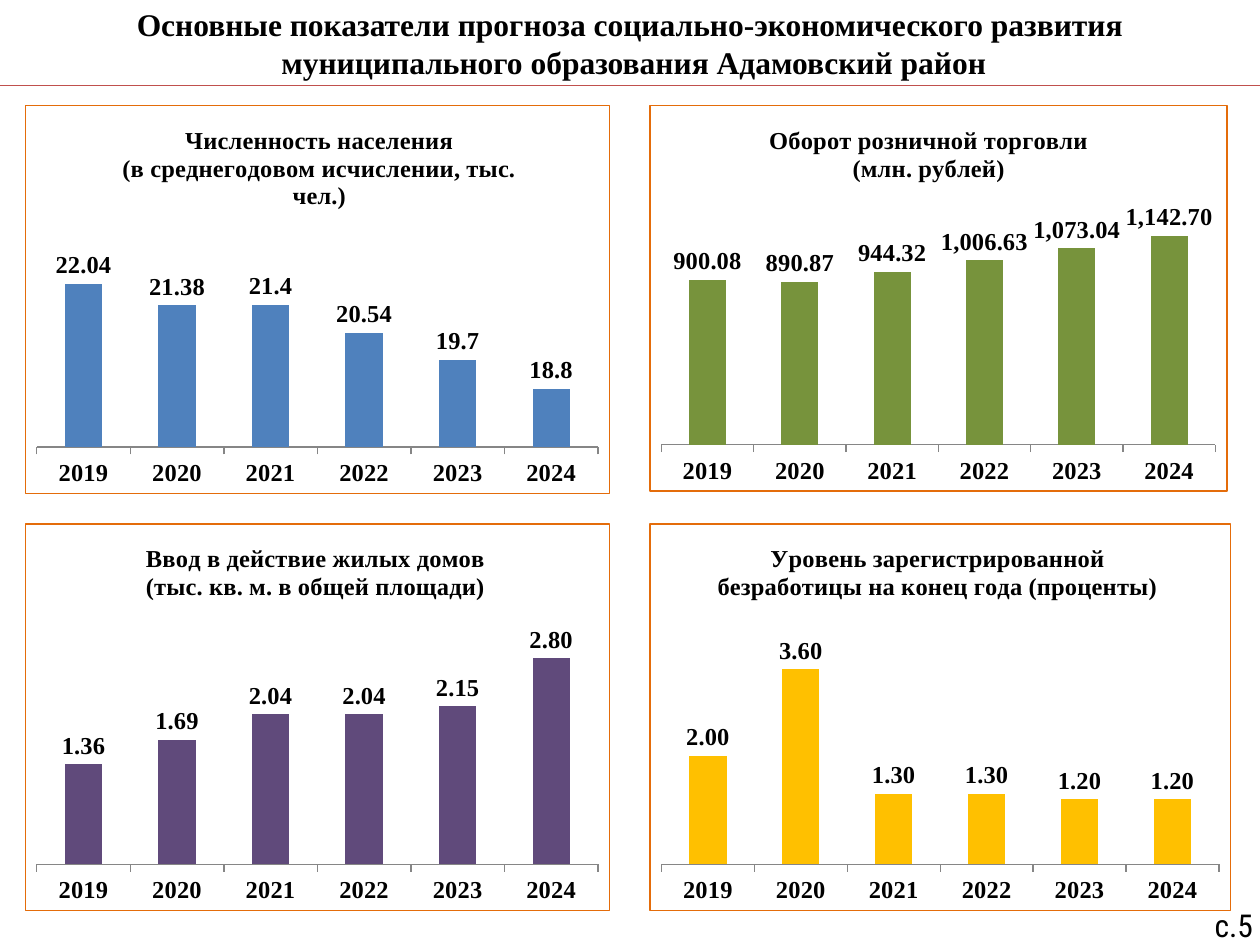
from lxml import etree
from pptx import Presentation
from pptx.chart.data import CategoryChartData
from pptx.dml.color import RGBColor
from pptx.enum.chart import XL_CHART_TYPE, XL_LABEL_POSITION, XL_TICK_LABEL_POSITION, XL_TICK_MARK
from pptx.enum.shapes import MSO_CONNECTOR
from pptx.enum.text import MSO_ANCHOR, PP_ALIGN
from pptx.oxml import parse_xml
from pptx.oxml.ns import nsdecls, qn
from pptx.util import Pt

COLUMNS = XL_CHART_TYPE.COLUMN_CLUSTERED
OUTSIDE_END = XL_LABEL_POSITION.OUTSIDE_END
LABELS_LOW = XL_TICK_LABEL_POSITION.LOW
TICK_OUT, TICK_NONE = XL_TICK_MARK.OUTSIDE, XL_TICK_MARK.NONE
STRAIGHT = MSO_CONNECTOR.STRAIGHT
MIDDLE, TOP = MSO_ANCHOR.MIDDLE, MSO_ANCHOR.TOP
CENTER, RIGHT = PP_ALIGN.CENTER, PP_ALIGN.RIGHT

BLACK = RGBColor(0x00, 0x00, 0x00)
RED = RGBColor(0xC0, 0x50, 0x4D)
GRAY = RGBColor(0x86, 0x86, 0x86)
BLUE = RGBColor(0x4F, 0x81, 0xBD)
GREEN = RGBColor(0x77, 0x93, 0x3C)
PURPLE = RGBColor(0x60, 0x4A, 0x7B)
YELLOW = RGBColor(0xFF, 0xC0, 0x00)
ORANGE = RGBColor(0xE4, 0x6C, 0x0A)

SERIF = "Times New Roman"
CONDENSED = "Roboto Condensed"
WIDTH, HEIGHT = 720, 540
HEADER_HEIGHT = 49

TITLE = ("Основные показатели прогноза социально-экономического развития\v"
         " муниципального образования Адамовский район")
PAGE_NUMBER = "с.5"
YEARS = ["2019", "2020", "2021", "2022", "2023", "2024"]
CHARTS = [
    dict(title="Численность населения\n(в среднегодовом исчислении, тыс.\nчел.)",
         values=[22.04, 21.38, 21.4, 20.54, 19.7, 18.8], color=BLUE,
         number_format="General", scale=(17, 23), size=(334.8, 222.5),
         title_left=0.16, plot_height=0.5),
    dict(title="Оборот розничной торговли\n(млн. рублей)",
         values=[900.08, 890.87, 944.32, 1006.63, 1073.04, 1142.7], color=GREEN,
         number_format="#,##0.00", scale=(0, 1200), size=(330.5, 221),
         title_left=0.2, plot_height=0.57),
    dict(title="Ввод в действие жилых домов\n(тыс. кв. м. в общей площади)",
         values=[1.36, 1.69, 2.04, 2.04, 2.15, 2.8], color=PURPLE,
         number_format="#,##0.00", scale=(0, 3), size=(334.8, 221.8),
         title_left=0.2, plot_height=0.57),
    dict(title="Уровень зарегистрированной\nбезработицы на конец года (проценты)",
         values=[2, 3.6, 1.3, 1.3, 1.2, 1.2], color=YELLOW,
         number_format="#,##0.00", scale=(0, 4), size=(332.6, 221.8),
         title_left=0.11, plot_height=0.56),
]
CHART_LEFTS = (14, 371)
CHART_TOPS = (60, 299)
TITLE_TOP = 0.04
PLOT_LEFT, PLOT_WIDTH, PLOT_BOTTOM = 0.02, 0.96, 0.88


def format_font(font, size, name=SERIF, bold=True):
    font.size, font.name, font.bold = Pt(size), name, bold
    font.color.rgb = BLACK


def write_text(shape, text, size=18, name=SERIF, bold=True, align=CENTER, anchor=TOP, margin=None):
    frame = shape.text_frame
    frame.word_wrap = True
    frame.vertical_anchor = anchor
    if margin is not None:
        frame.margin_left = frame.margin_right = Pt(margin)
        frame.margin_top = frame.margin_bottom = Pt(margin)
    paragraph = frame.paragraphs[0]
    paragraph.text = text
    paragraph.alignment = align
    for run in paragraph.runs:
        format_font(run.font, size, name, bold)


def manual_layout(inner=False, **fractions):
    """Return a c:layout element placed by fractions of the chart size."""
    target = '<c:layoutTarget val="inner"/>' if inner else ""
    modes = '<c:xMode val="edge"/><c:yMode val="edge"/>'
    places = "".join(f'<c:{key} val="{value:.2f}"/>' for key, value in fractions.items())
    return parse_xml(f'<c:layout {nsdecls("c")}><c:manualLayout>{target}{modes}{places}'
                     "</c:manualLayout></c:layout>")


def set_layout(parent, layout, before):
    for old in parent.findall(qn("c:layout")):
        parent.remove(old)
    parent.find(qn(before)).addprevious(layout)


def add_border(chart):
    border = parse_xml(f'<c:spPr {nsdecls("c", "a")}><a:noFill/><a:ln w="{Pt(0.75)}"><a:solidFill>'
                       f'<a:srgbClr val="{ORANGE}"/></a:solidFill></a:ln></c:spPr>')
    chart.element.find(qn("c:chart")).addnext(border)


def add_column_chart(slide, left, top, item):
    data = CategoryChartData(number_format=item["number_format"])
    data.categories = YEARS
    data.add_series(item["title"].replace("\n", " "), item["values"])
    width, height = item["size"]
    chart = slide.shapes.add_chart(COLUMNS, Pt(left), Pt(top), Pt(width), Pt(height), data).chart
    format_font(chart.font, 14)
    chart.has_legend = False
    add_border(chart)

    frame = chart.chart_title.text_frame
    frame.text = item["title"]
    for paragraph in frame.paragraphs:
        format_font(paragraph.font, 14)
        for run in paragraph.runs:
            format_font(run.font, 14)
    chart.chart_title.include_in_layout = False
    title = chart.element.find(".//" + qn("c:title"))
    set_layout(title, manual_layout(x=item["title_left"], y=TITLE_TOP), "c:overlay")

    value_axis = chart.value_axis
    value_axis.minimum_scale, value_axis.maximum_scale = item["scale"]
    value_axis.has_major_gridlines = False
    value_axis.visible = False
    category_axis = chart.category_axis
    category_axis.major_tick_mark, category_axis.minor_tick_mark = TICK_OUT, TICK_NONE
    category_axis.tick_label_position = LABELS_LOW
    category_axis.format.line.color.rgb = GRAY
    format_font(category_axis.tick_labels.font, 14)

    plot = chart.plots[0]
    plot.gap_width = 150
    plot.vary_by_categories = False
    fill = plot.series[0].format.fill
    fill.solid()
    fill.fore_color.rgb = item["color"]
    labels = plot.series[0].data_labels
    labels.show_value = True
    labels.position = OUTSIDE_END
    labels.number_format, labels.number_format_is_linked = item["number_format"], False
    format_font(labels.font, 14)
    plot_height = item["plot_height"]
    layout = manual_layout(inner=True, x=PLOT_LEFT, y=PLOT_BOTTOM - plot_height,
                           w=PLOT_WIDTH, h=plot_height)
    set_layout(chart.element.find(".//" + qn("c:plotArea")), layout, "c:barChart")


def main():
    presentation = Presentation()
    presentation.slide_width, presentation.slide_height = Pt(WIDTH), Pt(HEIGHT)
    slide = presentation.slides.add_slide(presentation.slide_layouts[5])

    title = slide.shapes.title
    title.left, title.top, title.width, title.height = Pt(0), Pt(0), Pt(WIDTH), Pt(HEADER_HEIGHT)
    write_text(title, TITLE, anchor=MIDDLE)

    rule = slide.shapes.add_connector(STRAIGHT, Pt(0), Pt(HEADER_HEIGHT), Pt(WIDTH), Pt(HEADER_HEIGHT))
    rule.line.color.rgb = RED
    rule.line.width = Pt(0.75)
    etree.SubElement(rule.element.spPr, qn("a:effectLst"))

    page_number = slide.shapes.add_textbox(Pt(666), Pt(518), Pt(50), Pt(22))
    write_text(page_number, PAGE_NUMBER, name=CONDENSED, bold=False, align=RIGHT, margin=0)

    for index, item in enumerate(CHARTS):
        row, column = divmod(index, 2)
        add_column_chart(slide, CHART_LEFTS[column], CHART_TOPS[row], item)
    presentation.save("out.pptx")


if __name__ == "__main__":
    main()
